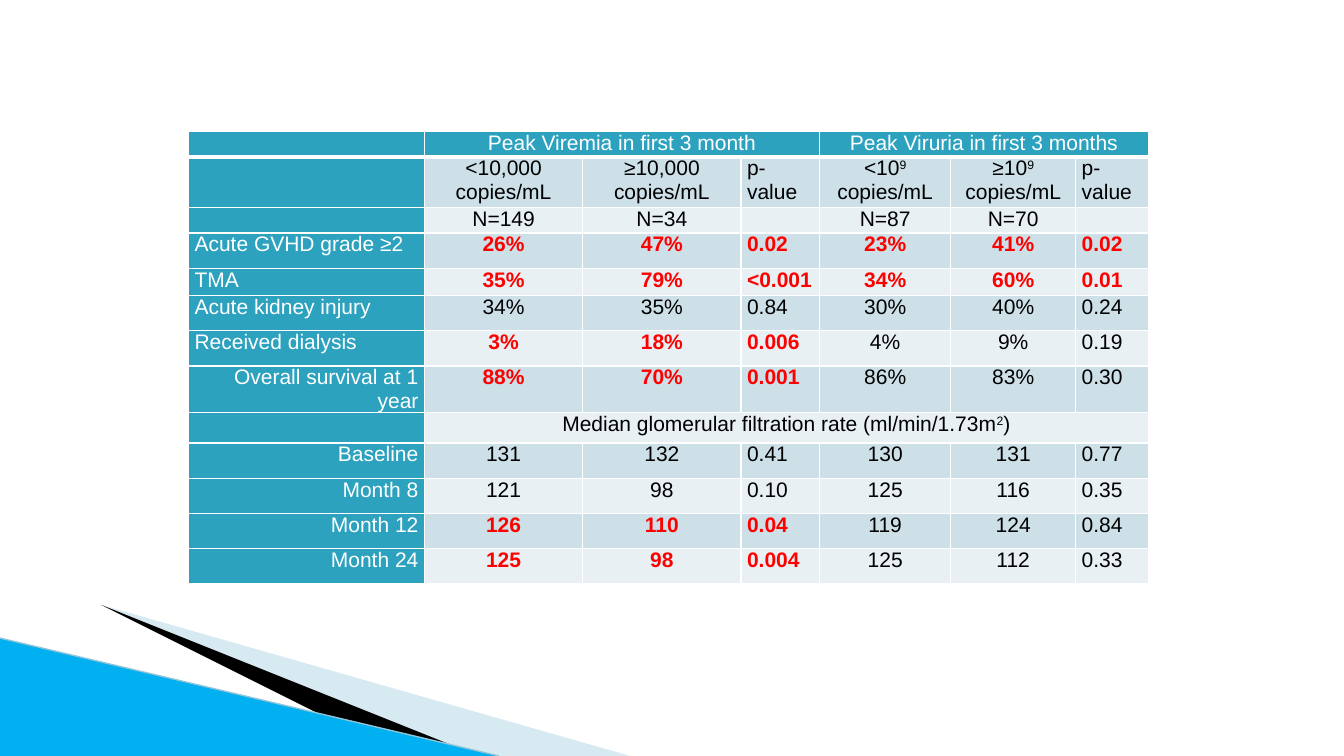
from dataclasses import dataclass
from lxml import etree
from pptx import Presentation
from pptx.dml.color import RGBColor
from pptx.enum.shapes import MSO_CONNECTOR, MSO_SHAPE
from pptx.enum.text import PP_ALIGN
from pptx.oxml.ns import qn
from pptx.util import Inches, Pt

LEFT, MID, RIGHT = PP_ALIGN.LEFT, PP_ALIGN.CENTER, PP_ALIGN.RIGHT
LINE, WEDGE = MSO_CONNECTOR.STRAIGHT, MSO_SHAPE.RIGHT_TRIANGLE


@dataclass
class Theme:
    font: str = "Arial"
    size: int = 15
    head: str = "2DA2BF"
    bands: tuple = ("E8F0F4", "CDE0E8")
    white: str = "FFFFFF"
    black: str = "000000"
    alert: str = "FF0000"
    sky: str = "00B0F0"
    mist: str = "9CCADC"
    edge: str = "93C5D8"


theme = Theme()
rgb = RGBColor.from_string


def paint(shape, color):
    shape.shadow.inherit = False
    shape.fill.solid()
    shape.fill.fore_color.rgb = rgb(color)
    shape.line.fill.background()


def frame(cell, base):
    """Draw white borders round a cell, with the given width at its bottom."""
    props = cell._tc.get_or_add_tcPr()
    for side, width in zip("LRTB", (1, 1, 1, base)):
        line = etree.SubElement(props, qn(f"a:ln{side}"), w=str(Pt(width)))
        fill = etree.SubElement(line, qn("a:solidFill"))
        etree.SubElement(fill, qn("a:srgbClr"), val=theme.white)


deck = Presentation()
deck.slide_width, deck.slide_height = Inches(13.33), Inches(7.5)
slide = deck.slides.add_slide(deck.slide_layouts[6])
shapes = slide.shapes

# Corner bands, from back to front
bands = [
    (theme.mist, [(0.73, 6.5), (7.93, 7.5), (6.08, 7.5)]),
    (theme.black, [(0.71, 6.49), (6.09, 7.5), (4.96, 7.5)]),
]
for color, points in bands:
    pen = shapes.build_freeform(*points[0], scale=Inches(1))
    pen.add_line_segments(points[1:], close=True)
    band = pen.convert_to_shape()
    paint(band, color)
    if color == theme.mist:
        tint = band._element.spPr.find(".//" + qn("a:srgbClr"))
        etree.SubElement(tint, qn("a:alpha"), val="40000")

top, wide = Inches(6.33), Inches(4.95)
wedge = shapes.add_shape(WEDGE, 0, top, wide, deck.slide_height - top)
paint(wedge, theme.sky)
rim = shapes.add_connector(LINE, 0, top, wide, deck.slide_height)
rim.line.color.rgb = rgb(theme.edge)
rim.line.width = Pt(0.95)
etree.SubElement(rim._element.spPr, qn("a:effectLst"))

# Table: text between carets is raised
rows = [
    ["", "Peak Viremia in first 3 month", "", "", "Peak Viruria in first 3 months", "", ""],
    ["", "<10,000 copies/mL", "≥10,000 copies/mL", "p-value",
     "<10^9 ^copies/mL", "≥10^9 ^copies/mL", "p-value"],
    ["", "N=149", "N=34", "", "N=87", "N=70", ""],
    ["Acute GVHD grade ≥2", "26%", "47%", "0.02", "23%", "41%", "0.02"],
    ["TMA", "35%", "79%", "<0.001", "34%", "60%", "0.01"],
    ["Acute kidney injury", "34%", "35%", "0.84", "30%", "40%", "0.24"],
    ["Received dialysis", "3%", "18%", "0.006", "4%", "9%", "0.19"],
    ["Overall survival at 1 year", "88%", "70%", "0.001", "86%", "83%", "0.30"],
    ["", "Median glomerular filtration rate (ml/min/1.73m^2^)", "", "", "", "", ""],
    ["Baseline", "131", "132", "0.41", "130", "131", "0.77"],
    ["Month 8", "121", "98", "0.10", "125", "116", "0.35"],
    ["Month 12", "126", "110", "0.04", "119", "124", "0.84"],
    ["Month 24", "125", "98", "0.004", "125", "112", "0.33"],
]
widths = [2.34, 1.57, 1.57, 0.78, 1.3, 1.24, 0.72]
heights = [0.25, 0.5, 0.25, 0.35, 0.27, 0.35, 0.35, 0.46, 0.3] + [0.35] * 4
spans = [(0, 1, 3), (0, 4, 6), (8, 1, 6)]
DATA, RATE, LATE = 3, 8, 7  # first data row, rate heading, first right-set label

table = shapes.add_table(
    len(rows), len(widths), Inches(1.87), Inches(1.3),
    Inches(sum(widths)), Inches(sum(heights))).table
table.first_row = table.horz_banding = False
for col, width in zip(table.columns, widths):
    col.width = Inches(width)
for row, height in zip(table.rows, heights):
    row.height = Inches(height)
for r, start, end in spans:
    table.cell(r, start).merge(table.cell(r, end))

for r, row in enumerate(rows):
    for c, text in enumerate(row):
        cell = table.cell(r, c)
        head = r == 0 or c == 0
        frame(cell, 3 if r == 0 else 1)
        cell.fill.solid()
        cell.fill.fore_color.rgb = rgb(theme.head if head else theme.bands[r % 2])
        cell.margin_left = cell.margin_right = Inches(0.06)
        cell.margin_top = cell.margin_bottom = 0

        para = cell.text_frame.paragraphs[0]
        if c == 0:
            para.alignment = RIGHT if r >= LATE else LEFT
        else:
            para.alignment = LEFT if c % 3 == 0 else MID
        if not text:
            etree.SubElement(para._p, qn("a:endParaRPr"), sz=str(theme.size * 100))
            continue

        hot = False
        if c and r >= DATA and r != RATE:
            value = row[3 if c <= 3 else 6]
            hot = float(value.lstrip("<")) < 0.05
        color = theme.white if head else theme.alert if hot else theme.black
        for i, part in enumerate(text.split("^")):
            if not part:
                continue
            run = para.add_run()
            run.text = part
            run.font.name, run.font.size = theme.font, Pt(theme.size)
            run.font.bold = hot
            run.font.color.rgb = rgb(color)
            if i % 2:
                run.font._element.set("baseline", "30000")

deck.save("out.pptx")
